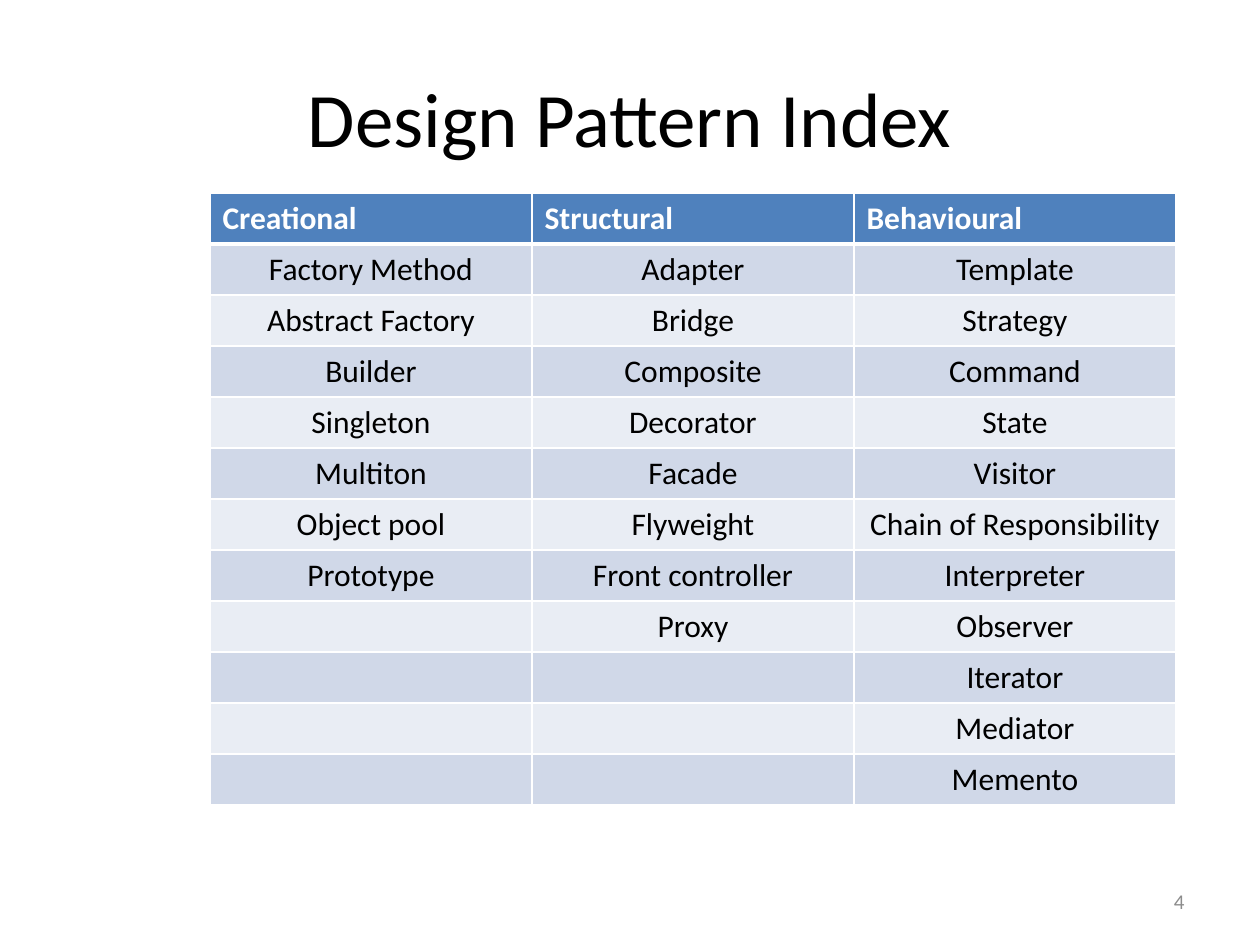
import itertools

import lxml.etree
import pptx
import pptx.dml.color
import pptx.enum.text
import pptx.oxml.ns
import pptx.util

RGBColor = pptx.dml.color.RGBColor
ALIGN = pptx.enum.text.PP_ALIGN
MIDDLE = pptx.enum.text.MSO_ANCHOR.MIDDLE

PX_PER_INCH = 126
FONT = "Calibri"
BLACK = RGBColor(0x00, 0x00, 0x00)
WHITE = RGBColor(0xFF, 0xFF, 0xFF)
GREY = RGBColor(0x8C, 0x8C, 0x8C)
HEADER_BLUE = RGBColor(0x4F, 0x81, 0xBD)
BAND_DARK = RGBColor(0xD0, 0xD8, 0xE8)
BAND_LIGHT = RGBColor(0xE9, 0xED, 0xF4)

COLUMN_WIDTH = 322
ROW_HEIGHT = 51
PATTERNS = {
    "Creational": [
        "Factory Method", "Abstract Factory", "Builder", "Singleton",
        "Multiton", "Object pool", "Prototype",
    ],
    "Structural": [
        "Adapter", "Bridge", "Composite", "Decorator", "Facade",
        "Flyweight", "Front controller", "Proxy",
    ],
    "Behavioural": [
        "Template", "Strategy", "Command", "State", "Visitor",
        "Chain of Responsibility", "Interpreter", "Observer", "Iterator",
        "Mediator", "Memento",
    ],
}


def px(length):
    return pptx.util.Emu(round(length * pptx.util.Inches(1) / PX_PER_INCH))


def place(shape, left, top, width, height):
    shape.left, shape.top = px(left), px(top)
    shape.width, shape.height = px(width), px(height)


def write(frame, text, size=18, color=BLACK, bold=False, align=ALIGN.CENTER):
    para = frame.paragraphs[0]
    para.alignment = align
    span = para.add_run()
    span.text = text
    span.font.name = FONT
    span.font.size = pptx.util.Pt(size)
    span.font.bold = bold
    span.font.color.rgb = color


def add_title(slide, text):
    title = slide.shapes.title
    place(title, 63, 38, 1134, 157)
    title.text_frame.vertical_anchor = MIDDLE
    write(title.text_frame, text, size=44)


def add_page_number(slide, number):
    box = slide.shapes.add_textbox(px(903), px(876), px(294), px(50))
    box.text_frame.word_wrap = True
    box.text_frame.vertical_anchor = MIDDLE
    write(box.text_frame, number, size=12, color=GREY, align=ALIGN.RIGHT)


def set_borders(cell, top=1, bottom=1):
    """Draw white cell borders; widths are in points. Call before the fill."""
    properties = cell._tc.get_or_add_tcPr()
    qn = pptx.oxml.ns.qn
    for side, width in (("L", 1), ("R", 1), ("T", top), ("B", bottom)):
        line = lxml.etree.SubElement(
            properties, qn(f"a:ln{side}"), w=str(pptx.util.Pt(width)))
        fill = lxml.etree.SubElement(line, qn("a:solidFill"))
        lxml.etree.SubElement(fill, qn("a:srgbClr"), val=str(WHITE))


def fill_cell(cell, color):
    cell.fill.solid()
    cell.fill.fore_color.rgb = color


def format_header(cell, text):
    set_borders(cell, bottom=3)
    fill_cell(cell, HEADER_BLUE)
    write(cell.text_frame, text, color=WHITE, bold=True, align=ALIGN.LEFT)


def format_entry(cell, text, row):
    set_borders(cell, top=3 if row == 1 else 1)
    fill_cell(cell, BAND_DARK if row % 2 else BAND_LIGHT)
    if text:
        cell.vertical_anchor = MIDDLE
        cell.margin_left = cell.margin_right = cell.margin_top = px(1)
        cell.margin_bottom = 0
        write(cell.text_frame, text)


def add_pattern_table(slide):
    entries = list(itertools.zip_longest(*PATTERNS.values(), fillvalue=""))
    row_count, column_count = len(entries) + 1, len(PATTERNS)
    table = slide.shapes.add_table(
        row_count, column_count, px(210), px(193),
        px(column_count * COLUMN_WIDTH), px(row_count * ROW_HEIGHT)).table
    for column, heading in enumerate(PATTERNS):
        format_header(table.cell(0, column), heading)
    for row, names in enumerate(entries, start=1):
        for column, name in enumerate(names):
            format_entry(table.cell(row, column), name, row)


def main():
    deck = pptx.Presentation()
    deck.slide_width = pptx.util.Inches(10)
    deck.slide_height = pptx.util.Inches(7.5)
    slide = deck.slides.add_slide(deck.slide_layouts[5])
    add_title(slide, "Design Pattern Index")
    add_page_number(slide, "4")
    add_pattern_table(slide)
    deck.save("out.pptx")


if __name__ == "__main__":
    main()
